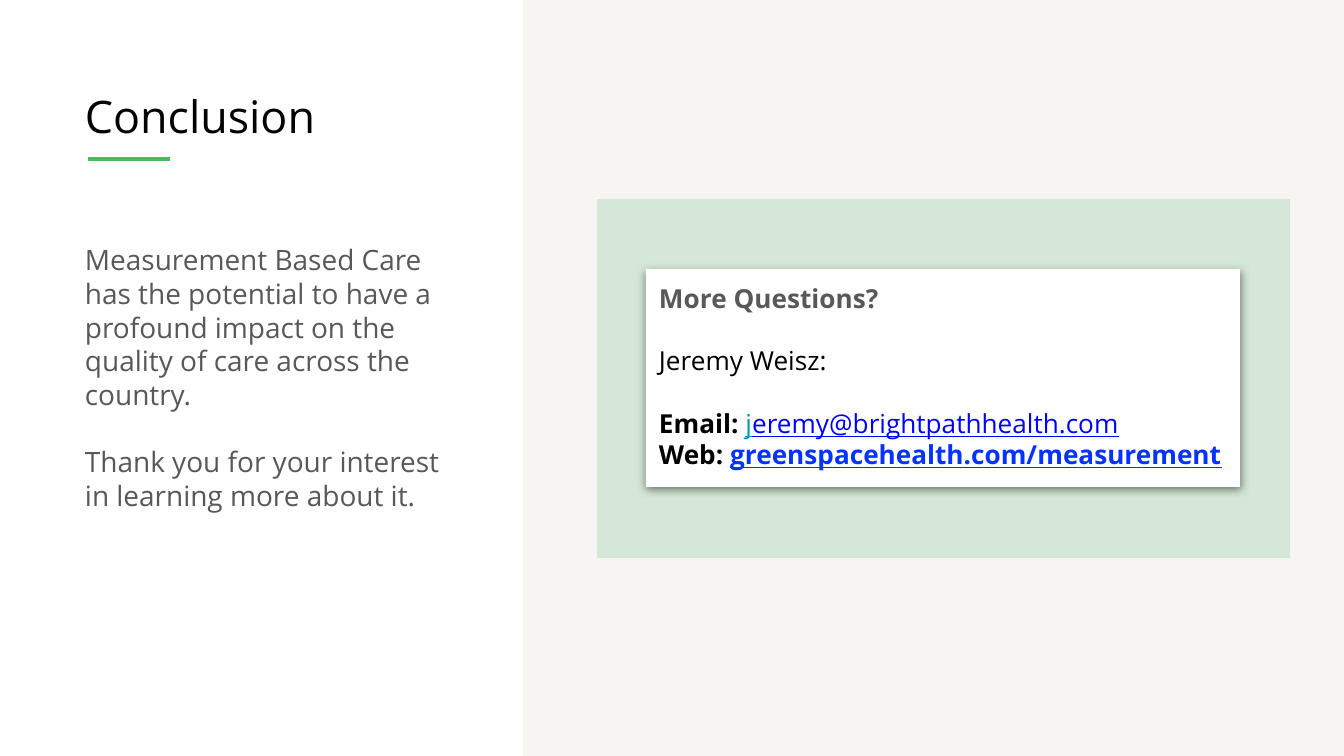
from lxml import etree
from pptx import Presentation
from pptx.dml.color import RGBColor
from pptx.enum.shapes import MSO_CONNECTOR, MSO_SHAPE
from pptx.enum.text import MSO_ANCHOR, PP_ALIGN
from pptx.oxml import parse_xml
from pptx.oxml.ns import nsdecls, qn
from pptx.util import Pt

EMU_PER_PX = 9144000 / 1344
FONT = "Open Sans"
COLORS = {
    "black": "000000", "grey": "585858", "white": "FFFFFF",
    "panel": "F7F5F2", "mint": "D5E8D7", "green": "4EB85C",
    "teal": "0097A7", "mail": "0000FF", "web": "0433FF",
}
SHADOW = (
    f'<a:effectLst {nsdecls("a")}>'
    '<a:outerShdw blurRad="63500" dist="19050" dir="5400000" rotWithShape="0">'
    '<a:srgbClr val="000000"><a:alpha val="50000"/></a:srgbClr>'
    '</a:outerShdw></a:effectLst>'
)


def px(n):
    return round(n * EMU_PER_PX)


def rgb(name):
    return RGBColor.from_string(COLORS[name])


class SlideBuilder:
    def __init__(self, slide):
        self.slide = slide

    def rect(self, x, y, w, h, color, shadow=False):
        sp = self.slide.shapes.add_shape(
            MSO_SHAPE.RECTANGLE, px(x), px(y), px(w), px(h))
        sp.shadow.inherit = False
        sp.fill.solid()
        sp.fill.fore_color.rgb = rgb(color)
        sp.line.fill.background()
        if shadow:
            sp_pr = sp._element.spPr
            sp_pr.replace(sp_pr.find(qn("a:effectLst")), parse_xml(SHADOW))
        return sp

    def line(self, x1, y1, x2, y2, color, width):
        ln = self.slide.shapes.add_connector(
            MSO_CONNECTOR.STRAIGHT, px(x1), px(y1), px(x2), px(y2))
        ln.line.color.rgb = rgb(color)
        ln.line.width = Pt(width)
        etree.SubElement(ln._element.spPr, qn("a:effectLst"))

    def text(self, x, y, w, h, paragraphs, size, **frame):
        """Add a text box with one size of type."""
        sp = self.slide.shapes.add_textbox(px(x), px(y), px(w), px(h))
        self.fill_text(sp, paragraphs, size, **frame)

    def fill_text(self, sp, paragraphs, size, margin=0, anchor=MSO_ANCHOR.TOP):
        """Each paragraph is (space before, [(text, color, font values)])."""
        tf = sp.text_frame
        values = {"word_wrap": True, "vertical_anchor": anchor}
        for side in ("left", "right", "top", "bottom"):
            values[f"margin_{side}"] = px(margin)
        for name, value in values.items():
            setattr(tf, name, value)
        for i, (before, runs) in enumerate(paragraphs):
            p = tf.add_paragraph() if i else tf.paragraphs[0]
            p.alignment = PP_ALIGN.LEFT
            if before:
                p.space_before = Pt(before)
            for text, color, extra in runs:
                r = p.add_run()
                r.text = text
                r.font.color.rgb = rgb(color)
                for name, value in {"name": FONT, "size": Pt(size), **extra}.items():
                    setattr(r.font, name, value)


def main():
    prs = Presentation()
    prs.slide_width, prs.slide_height = px(1344), px(756)
    s = SlideBuilder(prs.slides.add_slide(prs.slide_layouts[6]))
    bold, under = {"bold": True}, {"underline": True}

    # Right panel
    s.rect(523, 0, 821, 756, "panel")
    s.rect(597, 199, 693, 359, "mint")

    # Title and accent line
    s.text(85, 85, 378, 62, [(0, [("Conclusion", "black", {})])], 24,
           anchor=MSO_ANCHOR.MIDDLE)
    s.line(88, 159, 170, 159, "green", 2.25)

    # Closing message
    s.text(85, 243, 384, 332, [
        (0, [("Measurement Based Care has the potential to have a profound "
              "impact on the quality of care across the country.", "grey", {})]),
        (18, [("Thank you for your interest in learning more about it.",
               "grey", {})]),
    ], 15)

    # Contact card
    card = s.rect(646, 269, 594, 218, "white", shadow=True)
    s.fill_text(card, [
        (0, [("More Questions?", "grey", bold)]),
        (16.8, [("Jeremy Weisz:", "black", {})]),
        (16.8, [("Email: ", "black", bold), ("j", "teal", under),
                ("eremy@brightpathhealth.com", "mail", under)]),
        (0, [("Web: ", "black", bold),
             ("greenspacehealth.com/measurement", "web", {**bold, **under})]),
    ], 14, margin=13)

    prs.save("out.pptx")


if __name__ == "__main__":
    main()
